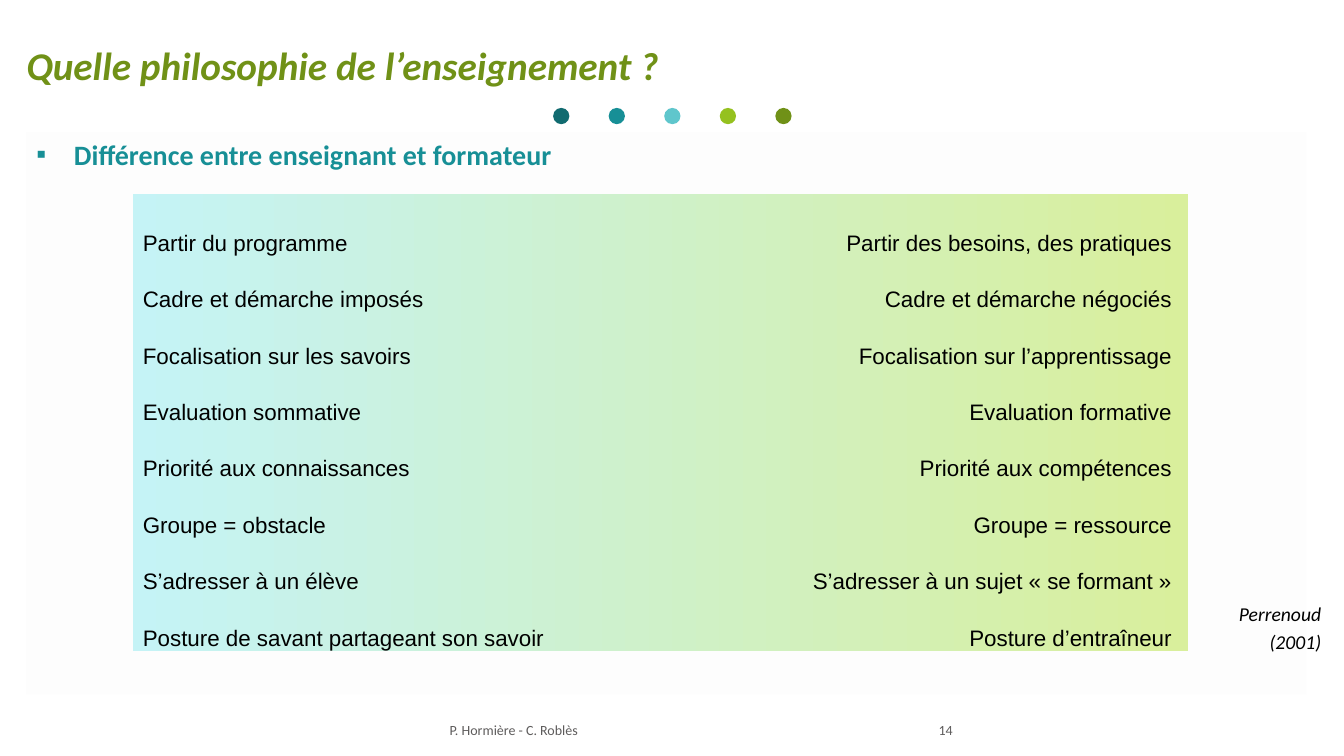
from lxml import etree
from pptx import Presentation
from pptx.dml.color import RGBColor
from pptx.enum.shapes import MSO_SHAPE
from pptx.enum.text import MSO_ANCHOR, MSO_AUTO_SIZE, PP_ALIGN
from pptx.oxml.ns import qn
from pptx.util import Cm, Pt

OVAL, RECT = MSO_SHAPE.OVAL, MSO_SHAPE.RECTANGLE
TOP, MIDDLE = MSO_ANCHOR.TOP, MSO_ANCHOR.MIDDLE
LEFT, CENTER, RIGHT = PP_ALIGN.LEFT, PP_ALIGN.CENTER, PP_ALIGN.RIGHT
FIXED = MSO_AUTO_SIZE.NONE

PINE = RGBColor(0x11, 0x6B, 0x70)
TEAL = RGBColor(0x17, 0x8F, 0x96)
AQUA = RGBColor(0x5F, 0xC6, 0xCC)
LIME = RGBColor(0x95, 0xC1, 0x1F)
OLIVE = RGBColor(0x70, 0x91, 0x17)
GREY = RGBColor(0x5E, 0x5C, 0x5C)
PALE = RGBColor(0xF8, 0xF8, 0xF8)
ICE = RGBColor(0xC5, 0xF3, 0xF6)
LEAF = RGBColor(0xD9, 0xEF, 0x9C)
BLACK = RGBColor(0, 0, 0)


def place(shape, left, top, width, height):
    shape.left, shape.top = Cm(left), Cm(top)
    shape.width, shape.height = Cm(width), Cm(height)


def write(shape, text, size, color, font="Calibri", bold=False, italic=False,
          align=LEFT, anchor=TOP, lines=1, after=0, bullet=None, indent=0, tab=None):
    """Fill a shape with text, one paragraph per line; lengths in cm."""
    frame = shape.text_frame
    frame.word_wrap = True
    frame.auto_size = FIXED
    frame.vertical_anchor = anchor
    for i, line in enumerate(text.split("\n")):
        par = frame.paragraphs[0] if i == 0 else frame.add_paragraph()
        par.text = line
        par.alignment = align
        par.line_spacing = lines
        par.space_before, par.space_after = Pt(0), Pt(after)
        props = par._p.get_or_add_pPr()
        if bullet:
            props.set("marL", str(Cm(indent)))
            props.set("indent", str(-Cm(indent)))
            etree.SubElement(props, qn("a:buChar"), char=bullet)
        if tab:
            tabs = etree.SubElement(props, qn("a:tabLst"))
            etree.SubElement(tabs, qn("a:tab"), pos=str(Cm(tab)), algn="r")
        for run in par.runs:
            run.font.name, run.font.size = font, Pt(size)
            run.font.bold, run.font.italic = bold, italic
            run.font.color.rgb = color


prs = Presentation()
prs.slide_width, prs.slide_height = Cm(33.87), Cm(19.05)
slide = prs.slides.add_slide(prs.slide_layouts[1])
shapes = slide.shapes

# Title and heading
title, body = shapes.title, slide.placeholders[1]
place(title, 0.41, 0.76, 32.54, 1.75)
write(title, "Quelle philosophie de l’enseignement ?", 28, OLIVE,
      bold=True, italic=True, anchor=MIDDLE)

place(body, 0.66, 3.33, 32.26, 14.17)
body.fill.solid()
body.fill.fore_color.rgb = PALE
tint = body._element.spPr.find(".//" + qn("a:srgbClr"))
etree.SubElement(tint, qn("a:alpha"), val="20000")
write(body, "Différence entre enseignant et formateur", 20, TEAL,
      bold=True, bullet="▪", indent=0.95)

# Row of dots
for i, color in enumerate([PINE, TEAL, AQUA, LIME, OLIVE]):
    dot = shapes.add_shape(OVAL, Cm(13.94 + 1.4 * i), Cm(2.72), Cm(0.41), Cm(0.41))
    dot.shadow.inherit = False
    dot.fill.solid()
    dot.fill.fore_color.rgb = color
    dot.line.fill.background()

# Teacher on the left, trainer on the right
pairs = [
    ("Partir du programme", "Partir des besoins, des pratiques"),
    ("Cadre et démarche imposés", "Cadre et démarche négociés"),
    ("Focalisation sur les savoirs", "Focalisation sur l’apprentissage"),
    ("Evaluation sommative", "Evaluation formative"),
    ("Priorité aux connaissances", "Priorité aux compétences"),
    ("Groupe = obstacle", "Groupe = ressource"),
    ("S’adresser à un élève", "S’adresser à un sujet « se formant »"),
    ("Posture de savant partageant son savoir", "Posture d’entraîneur"),
]
panel = shapes.add_shape(RECT, Cm(3.35), Cm(4.9), Cm(26.6), Cm(11.51))
panel.shadow.inherit = False
panel.line.fill.background()
panel.fill.gradient()
panel.fill.gradient_angle = 0
for stop, color, spot in zip(panel.fill.gradient_stops, [ICE, LEAF], [0, 1]):
    stop.color.rgb = color
    stop.position = spot
write(panel, "\n".join("\t".join(pair) for pair in pairs), 16, BLACK,
      font="Arial", lines=2.1, tab=25.93)

# Source and footer
cite = shapes.add_textbox(Cm(30.4), Cm(15.04), Cm(2.9), Cm(1.4))
frame = cite.text_frame
frame.margin_left = frame.margin_right = frame.margin_top = frame.margin_bottom = 0
write(cite, "Perrenoud (2001)", 14, BLACK, italic=True, align=RIGHT, lines=1.2, after=6)

for text, left, width, align in [("P. Hormière - C. Roblès", 3.61, 18.67, CENTER),
                                 ("14", 22.53, 1.73, RIGHT)]:
    box = shapes.add_textbox(Cm(left), Cm(18.01), Cm(width), Cm(0.79))
    write(box, text, 10, GREY, align=align, anchor=MIDDLE)

prs.save("out.pptx")
